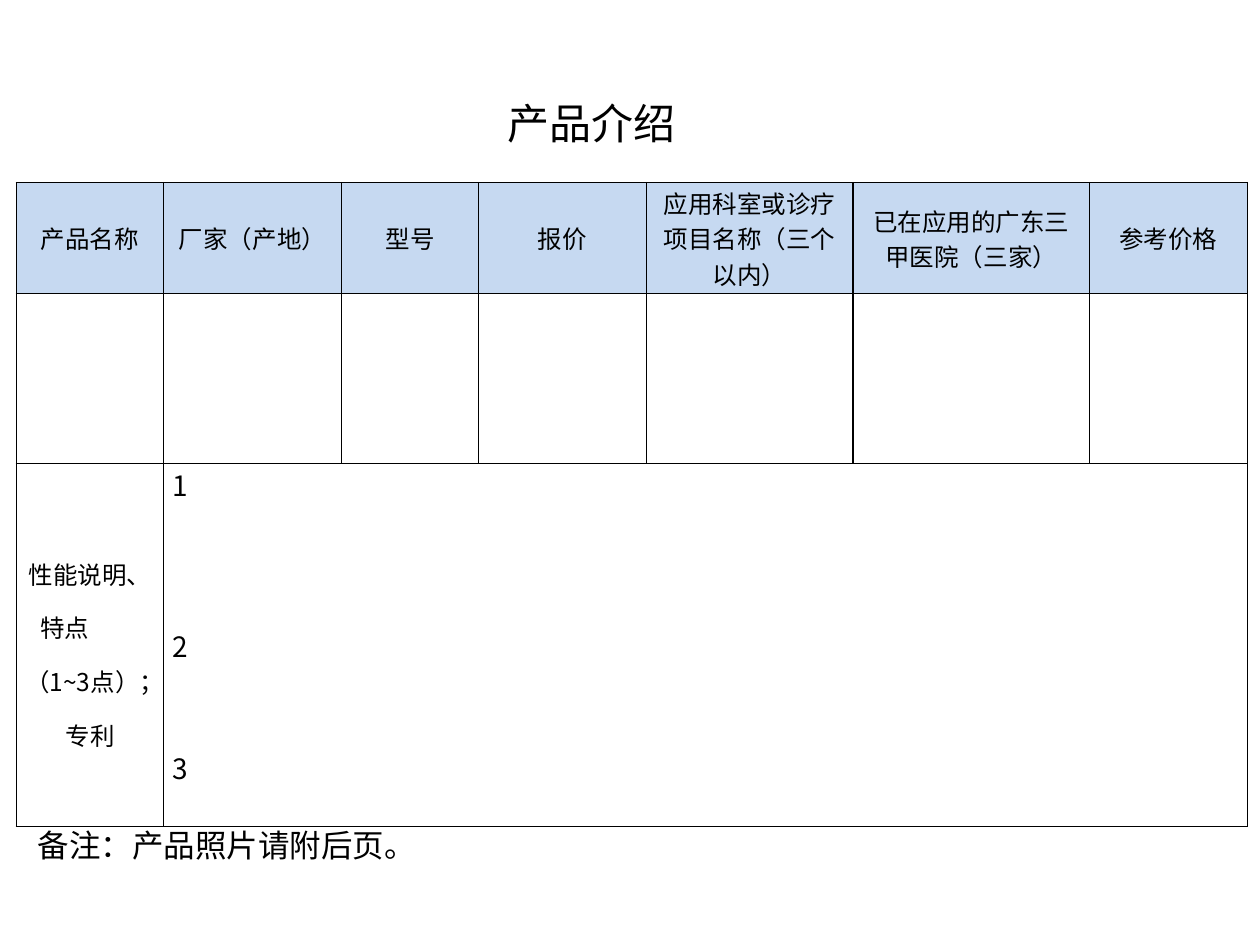
import pptx
import pptx.util
import pptx.dml.color
import pptx.enum.text
import pptx.oxml
import pptx.oxml.ns

Inches = pptx.util.Inches
Pt = pptx.util.Pt
ALIGN = pptx.enum.text.PP_ALIGN
ANCHOR = pptx.enum.text.MSO_ANCHOR

COLORS = {"ink": "000000", "head": "C6D9F1", "paper": "FFFFFF"}
CJK = "Noto Sans CJK SC"
WIDTHS = [1.17, 1.41, 1.09, 1.33, 1.64, 1.88, 1.25]
HEIGHTS = [0.88, 1.35, 2.88]
FILLS = ["head", "paper", "paper"]
HEADS = ["产品名称", "厂家（产地）", "型号", "报价",
         "应用科室或诊疗项目名称（三个以内）",
         "已在应用的广东三甲医院（三家）", "参考价格"]
TRAITS = [("性能说明、", ALIGN.CENTER, 0), ("特点", ALIGN.LEFT, 0.12),
          ("（1~3点）；", ALIGN.LEFT, 0), ("专利", ALIGN.LEFT, 0.32)]
POINTS = [("1", 0), ("2", 69.5), ("3", 46.5)]


class Deck:
    def __init__(self):
        self.prs = pptx.Presentation()
        self.prs.slide_width = Inches(10)
        self.prs.slide_height = Inches(7.5)
        self.slide = self.prs.slides.add_slide(self.prs.slide_layouts[5])

    def color(self, name):
        return pptx.dml.color.RGBColor.from_string(COLORS[name])

    def style(self, para, size, face, align=ALIGN.LEFT):
        para.alignment = align
        for run in para.runs:
            run.font.size = Pt(size)
            run.font.bold = False
            run.font.color.rgb = self.color("ink")
            run.font.name = face
            east = pptx.oxml.parse_xml(
                f'<a:ea {pptx.oxml.ns.nsdecls("a")} typeface="{CJK}"/>')
            props = run._r.get_or_add_rPr()
            props.find(pptx.oxml.ns.qn("a:latin")).addnext(east)

    def label(self, shape, text, size, face, align=ALIGN.LEFT):
        frame = shape.text_frame
        frame.word_wrap = True
        frame.auto_size = pptx.enum.text.MSO_AUTO_SIZE.NONE
        frame.text = text
        self.style(frame.paragraphs[0], size, face, align)

    def title(self, text, left, top, width, height):
        shape = self.slide.shapes.title
        shape.left, shape.top = Inches(left), Inches(top)
        shape.width, shape.height = Inches(width), Inches(height)
        self.label(shape, text, 24, "Arial", ALIGN.CENTER)

    def note(self, text, left, top, width, height):
        box = self.slide.shapes.add_textbox(
            Inches(left), Inches(top), Inches(width), Inches(height))
        self.label(box, text, 18, "Calibri")

    def cell(self, cell, fill):
        cell.margin_left = cell.margin_right = Inches(0.07)
        cell.margin_top = cell.margin_bottom = 0
        props = cell._tc.get_or_add_tcPr()
        for side in "LRTB":
            props.append(pptx.oxml.parse_xml(
                f'<a:ln{side} {pptx.oxml.ns.nsdecls("a")} w="12700">'
                f'<a:solidFill><a:srgbClr val="{COLORS["ink"]}"/></a:solidFill>'
                f'</a:ln{side}>'))
        cell.fill.solid()
        cell.fill.fore_color.rgb = self.color(fill)

    def table(self, left, top):
        grid = self.slide.shapes.add_table(
            len(HEIGHTS), len(WIDTHS), Inches(left), Inches(top),
            Inches(sum(WIDTHS)), Inches(sum(HEIGHTS))).table
        grid.first_row = grid.horz_banding = False
        for col, width in zip(grid.columns, WIDTHS):
            col.width = Inches(width)
        for row, height, fill in zip(grid.rows, HEIGHTS, FILLS):
            row.height = Inches(height)
            for cell in row.cells:
                self.cell(cell, fill)
        for cell, text in zip(grid.rows[0].cells, HEADS):
            self.fill_text(cell, text, 14, ALIGN.CENTER)
        grid.cell(2, 1).merge(grid.cell(2, len(WIDTHS) - 1))
        return grid

    def fill_text(self, cell, text, size, align=ALIGN.LEFT, anchor=ANCHOR.MIDDLE):
        cell.vertical_anchor = anchor
        cell.text_frame.text = text
        for para in cell.text_frame.paragraphs:
            self.style(para, size, CJK, align)
        return cell.text_frame.paragraphs

    def traits(self, cell):
        text = "\n".join(item[0] for item in TRAITS)
        paras = self.fill_text(cell, text, 14)
        for para, (_, align, indent) in zip(paras, TRAITS):
            para.alignment = align
            para.line_spacing = 1.5
            para._p.get_or_add_pPr().set("marL", str(Inches(indent)))

    def points(self, cell):
        text = "\n".join(item[0] for item in POINTS)
        paras = self.fill_text(cell, text, 16, anchor=ANCHOR.TOP)
        for para, (_, gap) in zip(paras, POINTS):
            para.space_before = Pt(gap)


def main():
    deck = Deck()
    grid = deck.table(0.13, 1.45)
    deck.traits(grid.cell(2, 0))
    deck.points(grid.cell(2, 1))
    deck.title("产品介绍", 0.85, 0.72, 7.69, 0.5)
    deck.note("备注：产品照片请附后页。", 0.2, 6.51, 9.38, 0.4)
    deck.prs.save("out.pptx")


if __name__ == "__main__":
    main()
